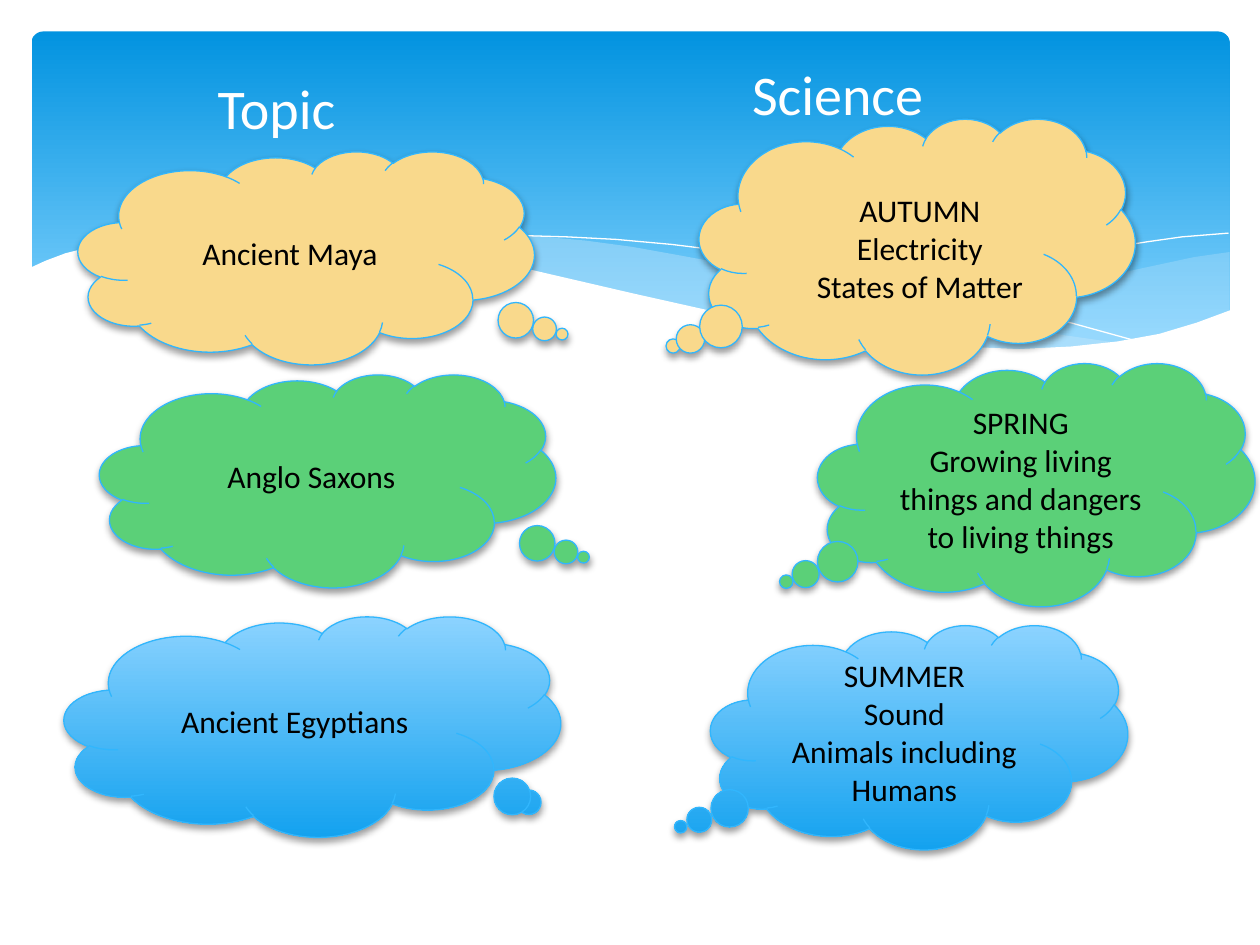
from lxml import etree
from pptx import Presentation
from pptx.dml.color import RGBColor
from pptx.enum.shapes import MSO_SHAPE as SHAPE
from pptx.enum.text import MSO_ANCHOR as ANCHOR, PP_ALIGN as ALIGN
from pptx.oxml import parse_xml
from pptx.oxml.ns import nsdecls, qn
from pptx.util import Inches, Pt

FONT = "Calibri"
YELLOW, GREEN = "F9D98C", "5BD078"
BLUE = [(0, "8CD3FF"), (1, "14A2EF")]
SKY = [(0, "0293E0"), (0.9, "83D3FE")]

# Clouds: box, tail adjustments, fill, lines of text
CLOUDS = [
    ((5.55, 0.94, 3.46, 2.03), (-0.56, 0.39), YELLOW, []),
    ((0.51, 4.89, 3.94, 1.75), (0.446, 0.352), BLUE, ["Ancient Egyptians"]),
    ((0.79, 2.97, 3.62, 1.69), (0.561, 0.359), GREEN, ["Anglo Saxons"]),
    ((6.49, 2.88, 3.47, 1.93), (-0.572, 0.4), GREEN,
     ["SPRING", "Growing living things and dangers to living things"]),
    ((5.64, 4.96, 3.31, 1.78), (-0.572, 0.4), BLUE,
     ["SUMMER", "Sound", "Animals including Humans"]),
    ((0.62, 1.2, 3.62, 1.69), (0.561, 0.359), YELLOW, ["Ancient Maya"]),
]
AUTUMN = ["AUTUMN", "Electricity", "States of Matter"]

# Header waves: points, fill, opacity in percent
WAVES = [
    ([(9.76, 2), (9.48, 2.04), (9.06, 2.13), (8.61, 2.23), (8.05, 2.37), (7.53, 2.48),
      (7.06, 2.57), (6.61, 2.65), (6.91, 2.69), (7.19, 2.72), (7.57, 2.76), (8.03, 2.78),
      (8.44, 2.77), (8.81, 2.73), (9.13, 2.67), (9.42, 2.59), (9.76, 2.47)], "C6E7FC", 29),
    ([(8.93, 2.73), (8.37, 2.65), (7.75, 2.54), (7.06, 2.4), (6.29, 2.22), (5.84, 2.11),
      (5.41, 2.03), (5.02, 1.96), (4.65, 1.91), (4.2, 1.87), (3.8, 1.85), (3.44, 1.86),
      (3.13, 1.88), (2.86, 1.91), (3.23, 1.96), (3.62, 2.03), (4.04, 2.11), (4.49, 2.22),
      (5.3, 2.4), (6.01, 2.55), (6.5, 2.64), (6.95, 2.7), (7.36, 2.75), (7.85, 2.78),
      (8.28, 2.78), (8.67, 2.76)], "C6E7FC", 40),
    ([(3.09, 1.95), (3.28, 1.92), (3.53, 1.89), (3.87, 1.87), (4.16, 1.87), (4.5, 1.88),
      (4.89, 1.9), (5.33, 1.94), (5.82, 2), (6.36, 2.08), (6.95, 2.19), (7.6, 2.33),
      (8.31, 2.51), (9.07, 2.72)], None, 100),
    ([(6.13, 2.57), (6.53, 2.46), (6.95, 2.35), (7.48, 2.23), (8.06, 2.1), (8.66, 1.99),
      (9.1, 1.92), (9.38, 1.88), (9.75, 1.85)], None, 100),
    ([(9.77, 2.46), (9.5, 2.56), (9.2, 2.65), (8.87, 2.71), (8.5, 2.75), (8.09, 2.77),
      (7.61, 2.75), (7.08, 2.7), (6.48, 2.62), (5.79, 2.5), (5.03, 2.33), (4.47, 2.2),
      (3.91, 2.07), (3.4, 1.97), (2.92, 1.9), (2.5, 1.86), (2.11, 1.84), (1.77, 1.84),
      (1.46, 1.85), (1.19, 1.87), (0.95, 1.91), (0.76, 1.95), (0.52, 2.01), (0.36, 2.07),
      (0.23, 2.13), (0.23, 3.29), (9.77, 3.29)], "FFFFFF", 100),
]


def rgb(color):
    return RGBColor.from_string(color)


def paint(sp, fill):
    """Fill with one colour, or with a list of stops running downwards."""
    if isinstance(fill, str):
        sp.fill.solid()
        sp.fill.fore_color.rgb = rgb(fill)
        return
    sp.fill.gradient()
    sp.fill.gradient_angle = 270
    for stop, (position, color) in zip(sp.fill.gradient_stops, fill):
        stop.position = position
        stop.color.rgb = rgb(color)


def write(tf, lines, size=18, color="000000", align=ALIGN.CENTER):
    tf.text = "\n".join(lines)
    for p in tf.paragraphs:
        p.alignment = align
        p.font.name, p.font.size = FONT, Pt(size)
        p.font.color.rgb = rgb(color)


def add_wave(shapes, points, fill, opacity):
    pts = [(Inches(x), Inches(y)) for x, y in points]
    builder = shapes.build_freeform(*pts[0])
    builder.add_line_segments(pts[1:], close=fill is not None)
    sp = builder.convert_to_shape()
    sp.shadow.inherit = False
    if fill is None:
        sp.fill.background()
        sp.line.color.rgb = rgb("FFFFFF")
        sp.line.width = Pt(0)
        return
    paint(sp, fill)
    sp.line.fill.background()
    if opacity < 100:
        clr = sp.element.spPr.find(".//" + qn("a:srgbClr"))
        etree.SubElement(clr, qn("a:alpha"), val=str(opacity * 1000))


def add_cloud(shapes, box, tail, fill, lines):
    sp = shapes.add_shape(SHAPE.CLOUD_CALLOUT, *map(Inches, box))
    for i, value in enumerate(tail):
        sp.adjustments[i] = value
    paint(sp, fill)
    sp.line.color.rgb = rgb("31B6FD")
    sp.line.width = Pt(0.75)
    sp.element.spPr.append(parse_xml(
        f'<a:effectLst {nsdecls("a")}><a:outerShdw blurRad="{Pt(4)}" dist="{Pt(2)}" '
        'dir="5400000" rotWithShape="0"><a:srgbClr val="000000">'
        '<a:alpha val="38000"/></a:srgbClr></a:outerShdw></a:effectLst>'))
    sp.text_frame.vertical_anchor = ANCHOR.MIDDLE
    if lines:
        write(sp.text_frame, lines)


def add_label(shapes, box, lines, wrap, **style):
    tf = shapes.add_textbox(*map(Inches, box)).text_frame
    tf.word_wrap = wrap
    write(tf, lines, **style)


prs = Presentation()
prs.slide_width, prs.slide_height = Inches(10), Inches(7.5)
s = prs.slides.add_slide(prs.slide_layouts[5])

# Header band and waves
band = s.shapes.add_shape(SHAPE.ROUNDED_RECTANGLE, *map(Inches, (0.25, 0.25, 9.51, 2.7)))
band.adjustments[0] = 0.034
band.shadow.inherit = False
band.line.fill.background()
paint(band, SKY)
for wave in WAVES:
    add_wave(s.shapes, *wave)

# Title, brought in front of the header
title = s.shapes.title
title.left, title.top, title.width, title.height = map(Inches, (0.57, 0.41, 3.25, 0.88))
title.text_frame.vertical_anchor = ANCHOR.MIDDLE
write(title.text_frame, ["Topic"], size=32, color="FFFFFF")
title.element.getparent().append(title.element)

# Clouds and free labels
for cloud in CLOUDS:
    add_cloud(s.shapes, *cloud)
add_label(s.shapes, (5.87, 0.42, 1.69, 0.64), ["Science"], False,
          size=32, color="FFFFFF", align=ALIGN.LEFT)
add_label(s.shapes, (6.29, 1.47, 2.02, 1.01), AUTUMN, True)

prs.save("out.pptx")
